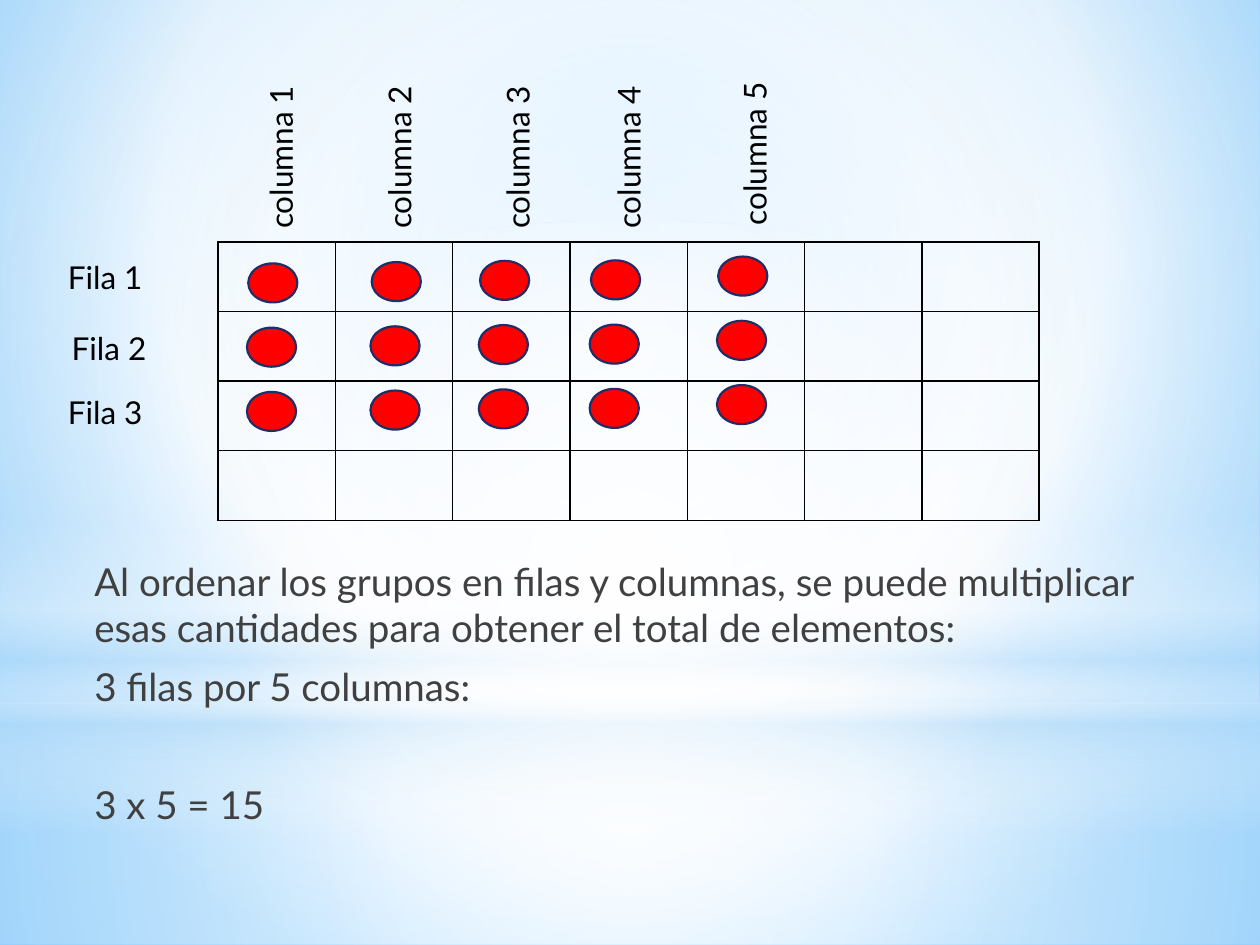
from lxml import etree
from pptx import Presentation
from pptx.dml.color import RGBColor
from pptx.enum.shapes import MSO_SHAPE
from pptx.oxml.ns import qn
from pptx.util import Inches, Pt

RECT, OVAL = MSO_SHAPE.RECTANGLE, MSO_SHAPE.OVAL
THEME = {
    "font": "Lato", "body": 22, "label": 18,
    "text": "404040", "ink": "000000", "dot": "FF0000", "edge": "1F2E69",
    "white": "FFFFFF", "pale": "B4DCFA", "sky": "9ED5FF", "deep": "5BB9FF",
}
WHITE, PALE = THEME["white"], THEME["pale"]
MID = (50, 50, 50, 50)

deck = Presentation()
deck.slide_width, deck.slide_height = Inches(10), Inches(7.5)
slide = deck.slides.add_slide(deck.slide_layouts[6])
shapes = slide.shapes


def place(left, top, width, height):
    """Turn percent shares of the slide into lengths."""
    wide, high = deck.slide_width / 100, deck.slide_height / 100
    return [round(n) for n in (left * wide, top * high, width * wide, height * high)]


def blend(parent, stops, focus=None):
    """Swap a solid fill for a gradient, round at focus (l, t, r, b) or downward."""
    grad = etree.Element(qn("a:gradFill"), rotWithShape="1")
    steps = etree.SubElement(grad, qn("a:gsLst"))
    for pos, tint, alpha in stops:
        stop = etree.SubElement(steps, qn("a:gs"), pos=str(pos * 1000))
        color = etree.SubElement(stop, qn("a:srgbClr"), val=tint)
        if alpha < 100:
            etree.SubElement(color, qn("a:alpha"), val=str(alpha * 1000))
    if focus:
        ring = etree.SubElement(grad, qn("a:path"), path="circle")
        sides = {side: str(n * 1000) for side, n in zip("ltrb", focus)}
        etree.SubElement(ring, qn("a:fillToRect"), **sides)
    else:
        etree.SubElement(grad, qn("a:lin"), ang="5400000", scaled="0")
    parent.replace(parent.find(qn("a:solidFill")), grad)


# Backdrop
slide.background.fill.solid()
blend(slide.element.find(".//" + qn("p:bgPr")),
      [(0, THEME["sky"], 100), (60, WHITE, 100), (100, THEME["deep"], 100)],
      (20, 10, 20, 60))

layers = [
    (RECT, (0, 74.4, 100, 25.6), [(0, WHITE, 91), (37, WHITE, 76), (100, PALE, 79)], MID),
    (RECT, (0, 0, 100, 74.4), [(0, WHITE, 89), (48, WHITE, 62), (100, PALE, 79)], MID),
    (RECT, (0, 54.93, 100, 33.33),
     [(0, WHITE, 0), (29, WHITE, 30), (45, PALE, 40), (55, WHITE, 26),
      (65, PALE, 60), (100, WHITE, 0)], None),
    (OVAL, (0, 23.33, 100, 74.4), [(0, WHITE, 100), (56, WHITE, 0)], MID),
]
for kind, area, stops, focus in layers:
    layer = shapes.add_shape(kind, *place(*area))
    layer.shadow.inherit = False
    layer.line.fill.background()
    layer.fill.solid()
    blend(layer.element.spPr, stops, focus)

# Empty grid
table = shapes.add_table(4, 7, *place(17.3, 25.6, 65.2, 29.47)).table
table.first_row = table.horz_banding = False
for cell in table.iter_cells():
    cell.fill.background()
    props = cell._tc.get_or_add_tcPr()
    for spot, side in enumerate(("lnL", "lnR", "lnT", "lnB")):
        line = etree.Element(qn("a:" + side), w=str(Pt(1)))
        paint = etree.SubElement(line, qn("a:solidFill"))
        etree.SubElement(paint, qn("a:srgbClr"), val=THEME["ink"])
        props.insert(spot, line)

# Dots: five columns of three
starts = [(19.7, 27.87), (29.5, 27.73), (38.1, 27.6), (46.9, 27.55), (57, 27.15)]
for left, top in starts:
    for row in range(3):
        shift = 0.1 if row else 0
        dot = shapes.add_shape(OVAL, *place(left - shift, top + 6.8 * row, 3.9, 4.13))
        dot.shadow.inherit = False
        dot.fill.solid()
        dot.fill.fore_color.rgb = RGBColor.from_string(THEME["dot"])
        dot.line.color.rgb = RGBColor.from_string(THEME["edge"])
        dot.line.width = Pt(1.25)

# Row and column labels, then the explanation
texts = []
for num, (left, top) in enumerate([(4.4, 26.67), (4.7, 34.13), (4.4, 40.93)], 1):
    texts.append((f"Fila {num}", (left, top, 10.5, 5.33), 0, "label", "ink"))
for num, left in enumerate((15, 24.4, 33.8, 42.6, 52.6), 1):
    top = 12.8 if num == 5 else 13.2
    texts.append((f"columna {num}", (left, top, 14.5, 5.33), 270, "label", "ink"))
body = "\n".join([
    "Al ordenar los grupos en filas y columnas, se puede multiplicar "
    "esas cantidades para obtener el total de elementos:",
    "3 filas por 5 columnas:",
    "3 x 5 = 15",
])
texts.append((body, (6, 58.4, 86.5, 32.53), 0, "body", "text"))

for words, area, turn, size, tint in texts:
    box = shapes.add_textbox(*place(*area))
    box.rotation = turn
    frame = box.text_frame
    frame.word_wrap = True
    frame.text = words
    for para in frame.paragraphs:
        font = para.runs[0].font
        font.name, font.size = THEME["font"], Pt(THEME[size])
        font.color.rgb = RGBColor.from_string(THEME[tint])
        if size == "body":
            para.space_before, para.space_after = Pt(4.4), Pt(3)
            para._p.get_or_add_pPr().set("marL", str(Inches(0.05)))
# The result stands one line lower
para.space_before = Pt(38)

deck.save("out.pptx")
